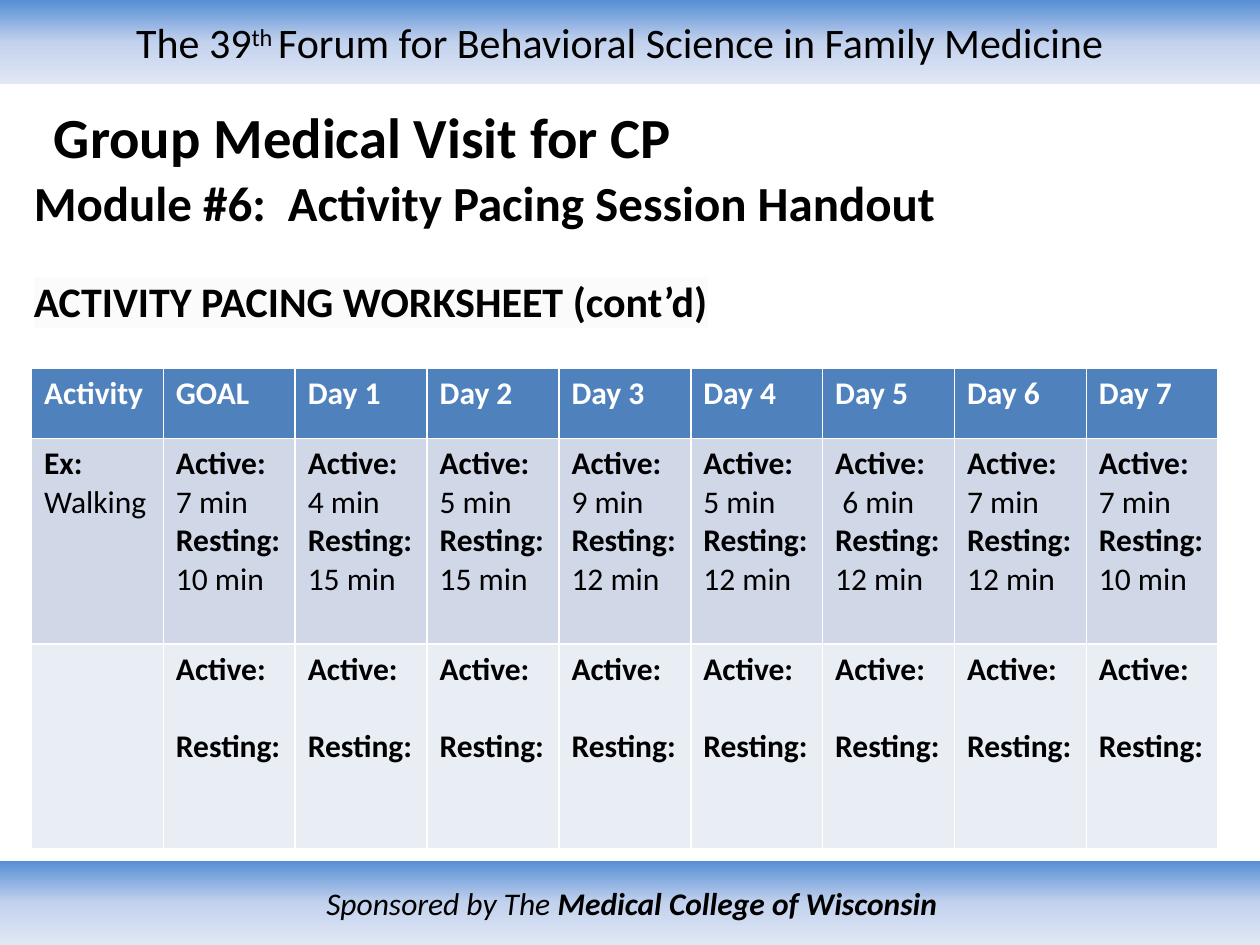
from copy import deepcopy
from dataclasses import dataclass

from lxml.etree import SubElement
from pptx import Presentation
from pptx.dml.color import RGBColor
from pptx.enum.shapes import MSO_SHAPE as Preset
from pptx.enum.text import MSO_ANCHOR as Anchor, PP_ALIGN as Align
from pptx.oxml.ns import qn
from pptx.util import Inches, Pt

FONT = "Calibri"
BLACK, WHITE = "000000", "FFFFFF"
HEADER_FILL, EXAMPLE_FILL, ENTRY_FILL = "4F81BD", "D0D8E8", "E9EDF4"
BAND_STOPS = ((0, "558ED5"), (0.5, "C2D1ED"), (1, "E1E8F5"))


@dataclass
class Pacing:
    heading: str
    active: str
    resting: str


PACINGS = [
    Pacing("GOAL", "7 min", "10 min"),
    Pacing("Day 1", "4 min", "15 min"),
    Pacing("Day 2", "5 min", "15 min"),
    Pacing("Day 3", "9 min", "12 min"),
    Pacing("Day 4", "5 min", "12 min"),
    Pacing("Day 5", " 6 min", "12 min"),
    Pacing("Day 6", "7 min", "12 min"),
    Pacing("Day 7", "7 min", "10 min"),
]


def color(value: str) -> RGBColor:
    return RGBColor.from_string(value)


def add_text(paragraph, text: str, *, size: float = 18, fill: str = BLACK,
             bold: bool = False, italic: bool = False,
             superscript: bool = False, highlight: str = "") -> None:
    run = paragraph.add_run()
    run.text = text
    font = run.font
    font.name, font.size = FONT, Pt(size)
    font.bold, font.italic = bold, italic
    font.color.rgb = color(fill)
    properties = run._r.get_or_add_rPr()
    if superscript:
        properties.set("baseline", "30000")
    if highlight:
        mark = SubElement(properties, qn("a:highlight"))
        SubElement(mark, qn("a:srgbClr")).set("val", highlight)
        properties.find(qn("a:solidFill")).addnext(mark)


def add_band(slide, top: float, width: float):
    shape = slide.shapes.add_shape(
        Preset.RECTANGLE, 0, Inches(top), Inches(width), Inches(0.67))
    shape.shadow.inherit = False
    shape.line.fill.background()
    shape.fill.gradient()
    shape.fill.gradient_angle = 270
    stops = shape._element.spPr.find(".//" + qn("a:gsLst"))
    stops.append(deepcopy(stops[-1]))
    for stop, (position, value) in zip(shape.fill.gradient_stops, BAND_STOPS):
        stop.position = position
        stop.color.rgb = color(value)
    frame = shape.text_frame
    frame.vertical_anchor = Anchor.MIDDLE
    frame.paragraphs[0].alignment = Align.CENTER
    return frame


def add_text_box(slide, left: float, top: float, width: float, height: float):
    frame = slide.shapes.add_textbox(
        Inches(left), Inches(top), Inches(width), Inches(height)).text_frame
    frame.word_wrap = True
    return frame


def fill_cell(cell, fill: str, lines: list[tuple[str, bool]],
              text_fill: str = BLACK, gap: float = 0) -> None:
    cell.fill.solid()
    cell.fill.fore_color.rgb = color(fill)
    frame = cell.text_frame
    for index, (text, bold) in enumerate(lines):
        paragraph = frame.add_paragraph() if index else frame.paragraphs[0]
        if index and gap:
            paragraph.space_before = Pt(gap)
        add_text(paragraph, text, fill=text_fill, bold=bold)


def add_worksheet(slide) -> None:
    heights = (0.56, 1.63, 1.63)
    table = slide.shapes.add_table(
        len(heights), len(PACINGS) + 1, Inches(0.25), Inches(2.92),
        Inches(9.42), Inches(sum(heights))).table
    for row, height in zip(table.rows, heights):
        row.height = Inches(height)
    fill_cell(table.cell(0, 0), HEADER_FILL, [("Activity", True)], WHITE)
    fill_cell(table.cell(1, 0), EXAMPLE_FILL, [("Ex:", True), ("Walking", False)])
    fill_cell(table.cell(2, 0), ENTRY_FILL, [])
    for column, pacing in enumerate(PACINGS, start=1):
        fill_cell(table.cell(0, column), HEADER_FILL, [(pacing.heading, True)], WHITE)
        fill_cell(table.cell(1, column), EXAMPLE_FILL, [
            ("Active:", True), (pacing.active, False),
            ("Resting:", True), (pacing.resting, False)])
        fill_cell(table.cell(2, column), ENTRY_FILL,
                  [("Active:", True), ("Resting:", True)], gap=22)


def main() -> None:
    presentation = Presentation()
    presentation.slide_width, presentation.slide_height = Inches(10), Inches(7.5)
    slide = presentation.slides.add_slide(presentation.slide_layouts[6])

    header = add_band(slide, 0, 10)
    header.margin_right = Inches(0.26)
    forum = header.paragraphs[0]
    add_text(forum, "The 39", size=24)
    add_text(forum, "th ", size=24, superscript=True)
    add_text(forum, "Forum for Behavioral Science in Family Medicine", size=24)

    sponsor = add_band(slide, 6.83, 10.03).paragraphs[0]
    add_text(sponsor, "Sponsored by The ", italic=True)
    add_text(sponsor, "Medical College of Wisconsin", italic=True, bold=True)

    title = add_text_box(slide, 0.33, 0.58, 9, 1)
    title.vertical_anchor = Anchor.MIDDLE
    add_text(title.paragraphs[0], "Group Medical Visit for CP", size=32.4, bold=True)

    body = add_text_box(slide, 0.17, 1.25, 9.83, 5.83)
    module = body.paragraphs[0]
    module.line_spacing = 1.15
    add_text(module, "Module #6:  Activity Pacing Session Handout", size=28, bold=True)
    worksheet = body.add_paragraph()
    worksheet.space_before = Pt(25)
    add_text(worksheet, "ACTIVITY PACING WORKSHEET (cont’d)",
             size=24, bold=True, highlight="FBFBFB")

    add_worksheet(slide)
    presentation.save("out.pptx")


if __name__ == "__main__":
    main()
